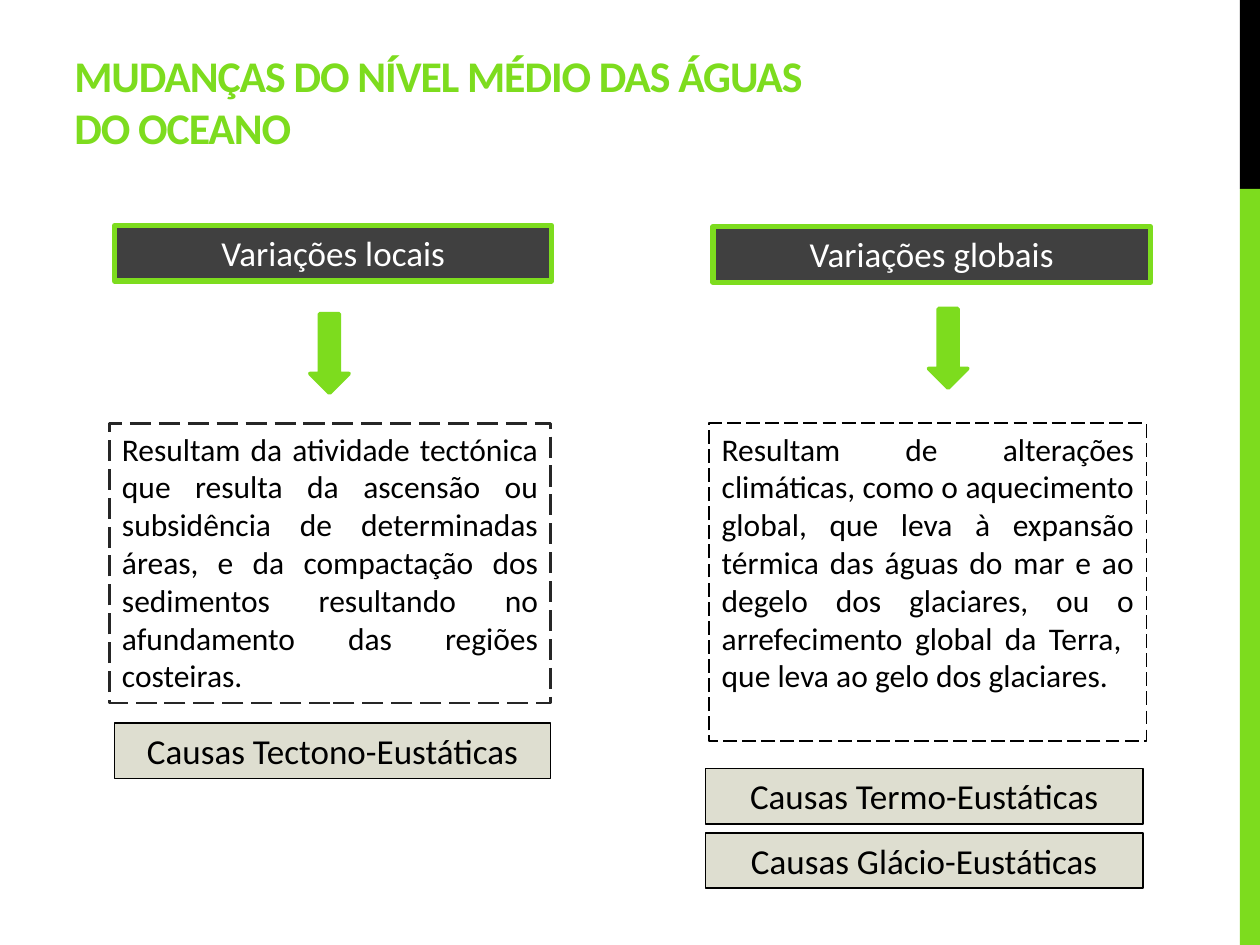
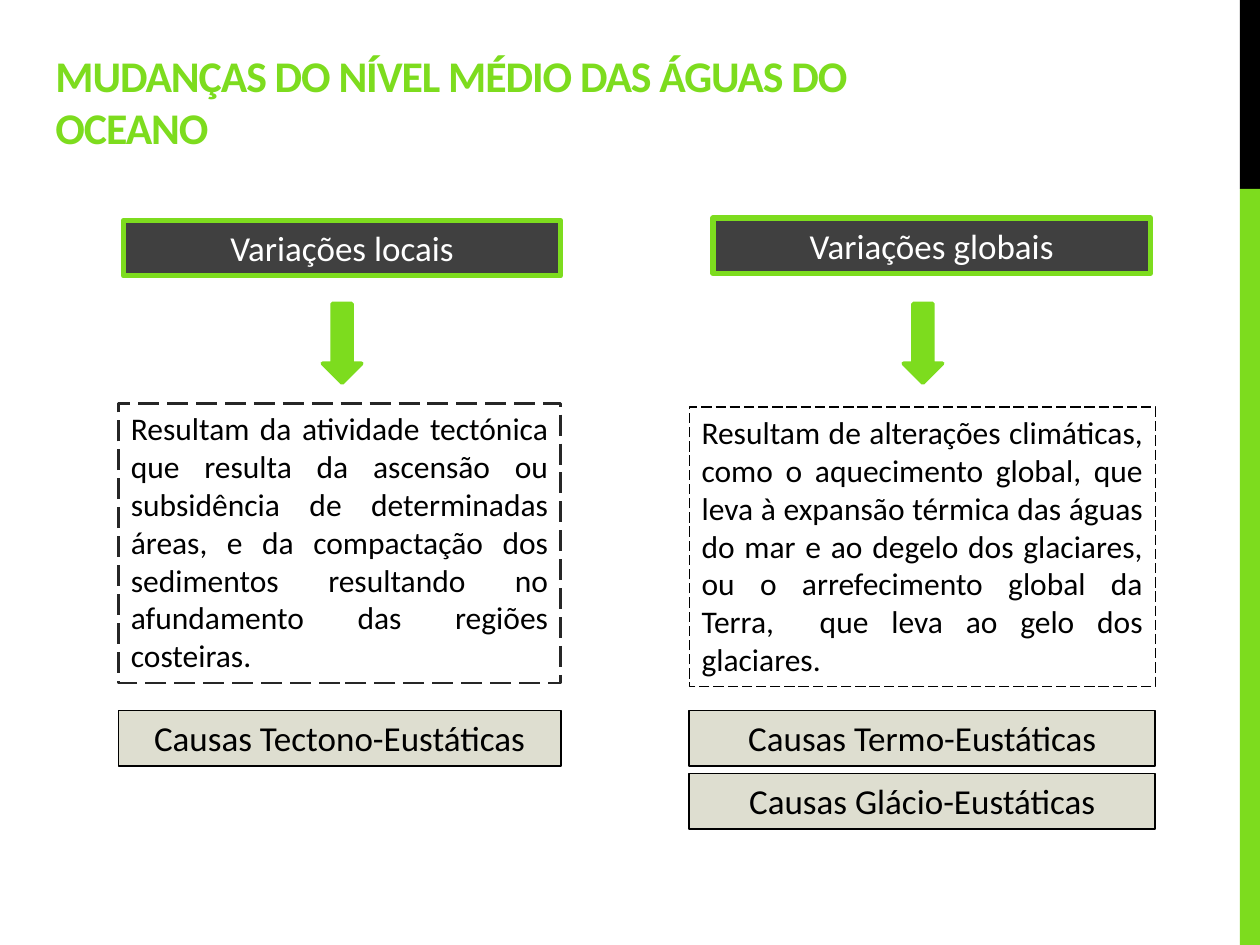
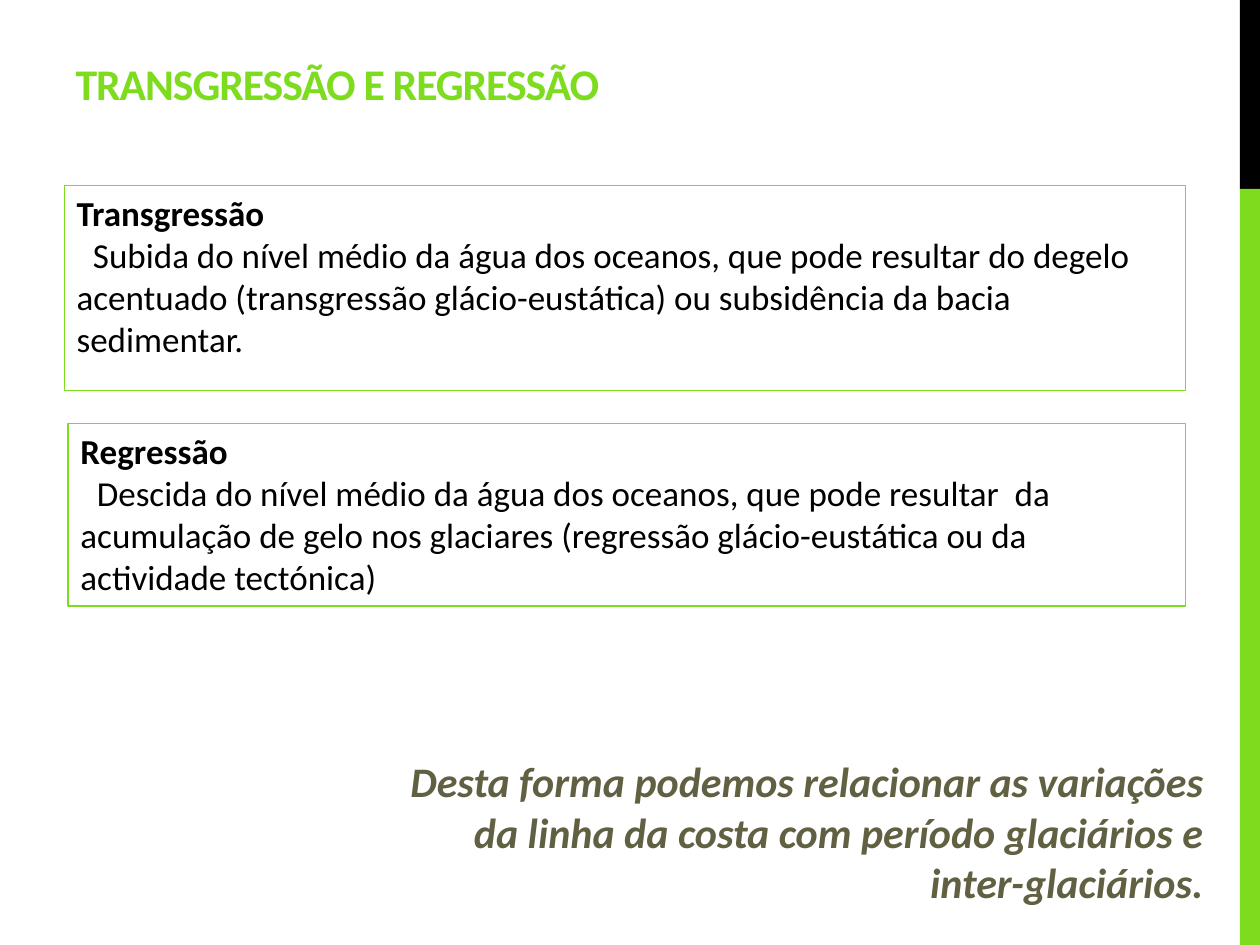
from pptx import Presentation
from pptx.util import Inches, Pt
from pptx.oxml.ns import qn
from pptx.dml.color import RGBColor as RGB
from pptx.enum.shapes import MSO_SHAPE as Shape
from pptx.enum.dml import MSO_LINE as Dash
from pptx.enum.text import PP_ALIGN as Align, MSO_ANCHOR as Anchor, MSO_AUTO_SIZE as Auto

GREEN, BLACK, WHITE = "7DDC1E", "000000", "FFFFFF"
DARK, SAND, OLIVE, GREY = "404040", "DEDED0", "616042", "262626"

HEAD = dict(fill=DARK, line=GREEN, width=3, align=Align.CENTER, font=dict(size=Pt(20)), ink=WHITE)
CAUSE = dict(fill=SAND, line=BLACK, width=1, align=Align.CENTER, font=dict(size=Pt(20)))
NOTE = dict(line=BLACK, width=1, dash=Dash.LONG_DASH, align=Align.JUSTIFY, font=dict(size=Pt(18)))
ARROW = dict(fill=GREEN, line=GREEN, width=2.25)
TERM = dict(line=GREEN, width=0.75, font=dict(size=Pt(20)))
CLOSE = dict(align=Align.RIGHT, font=dict(size=Pt(24), bold=True, italic=True), ink=OLIVE)
TITLE = dict(font=dict(size=Pt(25), bold=True), ink=GREEN)


def tint(part, code):
    part.rgb = RGB.from_string(code)


def dress(shape, style, *lines):
    for side, size in zip(("left", "top", "width", "height"), style["at"]):
        setattr(shape, side, Inches(size))
    if not shape.is_placeholder:
        shape.shadow.inherit = False
    for part, key in ((shape.fill, "fill"), (shape.line.fill, "line")):
        if key in style:
            part.solid()
            tint(part.fore_color, style[key])
        else:
            part.background()
    if "line" in style:
        shape.line.width = Pt(style["width"])
        shape.line.dash_style = style.get("dash")
    if not lines:
        return
    frame = shape.text_frame
    frame.word_wrap = True
    frame.auto_size = Auto.NONE
    frame.vertical_anchor = Anchor.BOTTOM if shape.is_placeholder else Anchor.TOP
    frame.text = "\n".join(lines)
    for para in frame.paragraphs:
        para.alignment = style.get("align", Align.LEFT)
        for run in para.runs:
            run.font.name = "Calibri"
            for key, value in style["font"].items():
                setattr(run.font, key, value)
            tint(run.font.color, style.get("ink", BLACK))


LEVEL = "MUDANÇAS DO NÍVEL MÉDIO DAS ÁGUAS DO OCEANO"
pages = [
    (LEVEL, (0.49, 0.28, 6.33, 0.99)),
    (LEVEL, (0.34, 0.2, 6.55, 1.07)),
    ("TRANSGRESSÃO E REGRESSÃO", (0.5, 0.17, 6.33, 0.75)),
]

local = (
    "Variações locais",
    "Resultam da atividade tectónica que resulta da ascensão ou subsidência de determinadas áreas, "
    "e da compactação dos sedimentos resultando no afundamento das regiões costeiras.",
    ["Causas Tectono-Eustáticas"],
)
world = (
    "Variações globais",
    "Resultam de alterações climáticas, como o aquecimento global, que leva à expansão térmica das águas "
    "do mar e ao degelo dos glaciares, ou o arrefecimento global da Terra,  que leva ao gelo dos glaciares.",
    ["Causas Termo-Eustáticas", "Causas Glácio-Eustáticas"],
)
columns = [
    (0, local, (0.91, 1.79), (2.46, 2.49), (0.87, 3.36, 3.5, 2.22), (0.91, 5.74, 3.46), 0, GREY, 1.5),
    (0, world, (5.66, 1.8), (7.37, 2.45), (5.63, 3.36, 3.47, 2.52), (5.6, 6.1, 3.47), 0.51, BLACK, 1),
    (1, local, (0.98, 1.75), (2.56, 2.41), (0.94, 3.2, 3.51, 2.22), (0.94, 5.64, 3.51), 0, GREY, 1.5),
    (1, world, (5.66, 1.73), (7.17, 2.41), (5.47, 3.23, 3.7, 2.22), (5.47, 5.64, 3.7), 0.5, BLACK, 0.75),
]
terms = [
    ((0.51, 1.47, 8.9, 1.63), "Transgressão",
     "Subida do nível médio da água dos oceanos, que pode resultar do degelo acentuado "
     "(transgressão glácio-eustática) ou subsidência da bacia sedimentar."),
    ((0.54, 3.36, 8.87, 1.45), "Regressão",
     "Descida do nível médio da água dos oceanos, que pode resultar  da acumulação de gelo nos glaciares "
     "(regressão glácio-eustática ou da actividade tectónica)"),
]

deck = Presentation()
deck.slide_width, deck.slide_height = Inches(10), Inches(7.5)
slides = []
for title, place in pages:
    slide = deck.slides.add_slide(deck.slide_layouts[5])
    slides.append(slide)
    for top, height, shade in ((0, 1.5, BLACK), (1.5, 6, GREEN)):
        band = slide.shapes.add_shape(Shape.RECTANGLE, 0, 0, 0, 0)
        dress(band, dict(at=(9.84, top, 0.16, height), fill=shade))
    dress(slide.shapes.title, {**TITLE, "at": place}, title)
    for props in slide.shapes.title.element.iter(qn("a:rPr")):
        props.set("spc", "-60")

for page, (head, note, causes), spot, tip, area, (left, top, width), step, edge, weight in columns:
    shapes = slides[page].shapes
    items = [
        (Shape.RECTANGLE, {**HEAD, "at": (*spot, 3.47, 0.44)}, [head]),
        (Shape.DOWN_ARROW, {**ARROW, "at": (*tip, 0.31, 0.63)}, []),
        (Shape.RECTANGLE, {**NOTE, "at": area, "line": edge, "width": weight}, [note]),
    ]
    for row, cause in enumerate(causes):
        items.append((Shape.RECTANGLE, {**CAUSE, "at": (left, top + row * step, width, 0.44)}, [cause]))
    for kind, style, lines in items:
        dress(shapes.add_shape(kind, 0, 0, 0, 0), style, *lines)

shapes = slides[2].shapes
for place, term, sense in terms:
    box = shapes.add_shape(Shape.RECTANGLE, 0, 0, 0, 0)
    dress(box, {**TERM, "at": place}, term, sense)
    name, body = box.text_frame.paragraphs
    name.runs[0].font.bold = True
    body._p.get_or_add_pPr().set("indent", str(Inches(0.13)))

close = shapes.add_textbox(0, 0, 0, 0)
dress(close, {**CLOSE, "at": (2.87, 5.95, 6.78, 1.31)},
      "Desta forma podemos relacionar as variações da linha da costa com período glaciários e inter-glaciários.")

deck.save("out.pptx")
